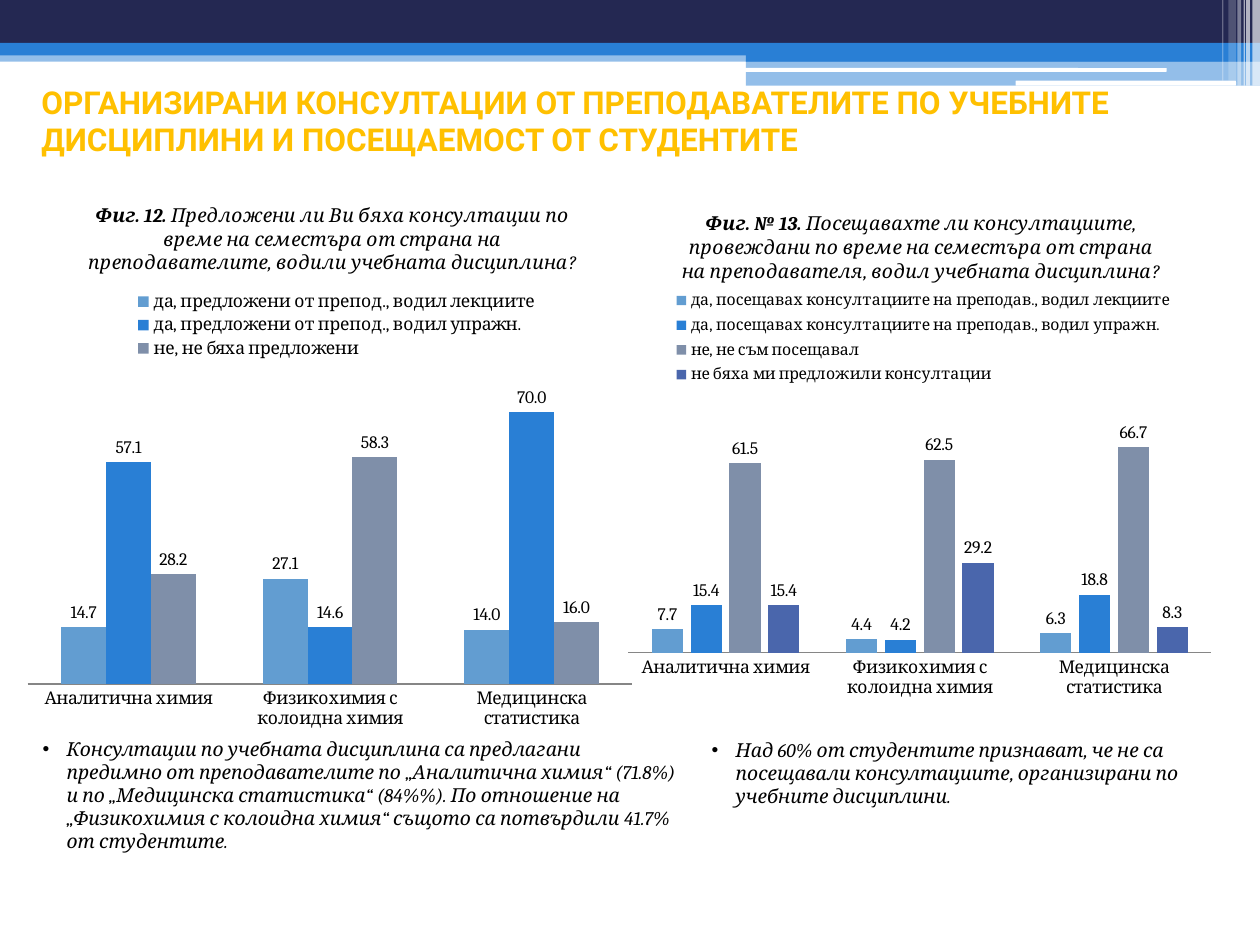
from pptx import Presentation
from pptx.chart.data import CategoryChartData
from pptx.dml.color import RGBColor
from pptx.enum.chart import XL_CHART_TYPE, XL_LABEL_POSITION, XL_LEGEND_POSITION, XL_TICK_MARK
from pptx.enum.shapes import MSO_SHAPE
from pptx.enum.text import MSO_ANCHOR
from pptx.oxml import parse_xml
from pptx.oxml.ns import qn
from pptx.util import Inches, Pt
from lxml.etree import SubElement

CATS = ["Аналитична химия", "Физикохимия с колоидна химия", "Медицинска статистика"]
FILLS = ["629DD1", "297FD5", "7F8FA9", "4A66AC"]
SERIF = "Cambria"
CHART_NS = "http://schemas.openxmlformats.org/drawingml/2006/chart"


def color(code):
    return RGBColor.from_string(code)


def write(par, text, size=11, font=SERIF, ink="000000", bold=False, italic=False):
    run = par.add_run()
    run.text = text
    face = run.font
    face.size, face.name, face.bold, face.italic = Pt(size), font, bold, italic
    face.color.rgb = color(ink)


def place(node, index, inner=False, **spots):
    """Give a chart part a manual layout, as shares of the chart."""
    for old in node.findall(qn("c:layout")):
        node.remove(old)
    target = '<c:layoutTarget val="inner"/>' if inner else ""
    modes = '<c:xMode val="edge"/><c:yMode val="edge"/>'
    sides = "".join(f'<c:{key} val="{val}"/>' for key, val in spots.items())
    node.insert(index, parse_xml(
        f'<c:layout xmlns:c="{CHART_NS}"><c:manualLayout>{target}{modes}{sides}'
        "</c:manualLayout></c:layout>"))


class Deck:
    def __init__(self):
        self.show = Presentation()
        self.show.slide_width, self.show.slide_height = Inches(10), Inches(7.5)
        self.slide = self.show.slides.add_slide(self.show.slide_layouts[6])

    def bar(self, x, y, w, h, fill, alpha=100, kind=MSO_SHAPE.RECTANGLE):
        shape = self.slide.shapes.add_shape(kind, Inches(x), Inches(y), Inches(w), Inches(h))
        shape.shadow.inherit = False
        shape.line.fill.background()
        shape.fill.solid()
        shape.fill.fore_color.rgb = color(fill)
        if alpha < 100:
            tone = shape.fill._xPr.find(qn("a:solidFill"))[0]
            SubElement(tone, qn("a:alpha"), val=str(alpha * 1000))

    def text(self, x, y, w, h, words, bullet=False, anchor=MSO_ANCHOR.TOP, **style):
        box = self.slide.shapes.add_textbox(Inches(x), Inches(y), Inches(w), Inches(h))
        frame = box.text_frame
        frame.word_wrap = True
        frame.vertical_anchor = anchor
        par = frame.paragraphs[0]
        if bullet:
            par.space_after = Pt(10)
            props = par._p.get_or_add_pPr()
            props.set("marL", str(Inches(0.19)))
            props.set("indent", str(-Inches(0.19)))
            SubElement(props, qn("a:buFont"), typeface="Arial")
            SubElement(props, qn("a:buChar"), char="•")
        write(par, words, **style)

    def chart(self, x, y, w, h, label, title, rows, plot, legend, head, size=10, overlap=0):
        data = CategoryChartData(number_format="0.0")
        data.categories = CATS
        for name, vals in rows:
            data.add_series(name, vals)
        chart = self.slide.shapes.add_chart(
            XL_CHART_TYPE.COLUMN_CLUSTERED, Inches(x), Inches(y), Inches(w), Inches(h), data).chart
        chart.font.size, chart.font.name = Pt(10), SERIF
        chart.font.color.rgb = color("000000")

        # Title
        par = chart.chart_title.text_frame.paragraphs[0]
        write(par, label, bold=True, italic=True)
        write(par, " " + title, italic=True)
        chart.chart_title.include_in_layout = False
        place(chart.chart_title._element, 1, **head)

        # Legend
        chart.has_legend = True
        key = chart.legend
        key.position = XL_LEGEND_POSITION.TOP
        key.include_in_layout = False
        key.font.size, key.font.name = Pt(size), SERIF
        key.font.color.rgb = color("000000")
        place(key._element, 1, **legend)

        # Axes
        axis = chart.value_axis
        axis.minimum_scale, axis.maximum_scale = 0, 80
        axis.has_major_gridlines = False
        axis.visible = False
        base = chart.category_axis
        base.major_tick_mark = XL_TICK_MARK.NONE
        base.format.line.color.rgb = color("868686")

        # Columns and their values
        body = chart.plots[0]
        body.gap_width, body.overlap = 150, overlap
        body.vary_by_categories = False
        for series, fill in zip(body.series, FILLS):
            series.format.fill.solid()
            series.format.fill.fore_color.rgb = color(fill)
            tags = series.data_labels
            tags.show_value = True
            tags.number_format, tags.number_format_is_linked = "0.0", False
            tags.position = XL_LABEL_POSITION.OUTSIDE_END
        place(chart._chartSpace.chart.plotArea, 0, inner=True, **plot)


def main():
    deck = Deck()

    # Header bands
    deck.bar(0, 0.4, 10, 0.09, "297FD5", 50)
    deck.bar(0, 0, 10, 0.34, "242852")
    deck.bar(0, 0.34, 10, 0.1, "297FD5")
    deck.bar(5.92, 0.39, 4.08, 0.1, "297FD5")
    deck.bar(5.92, 0.48, 4.08, 0.2, "297FD5", 50)
    for x, y, w, h in [(5.91, 0.54, 3.35, 0.03), (8.06, 0.64, 1.75, 0.04)]:
        deck.bar(x, y, w, h, "FFFFFF", kind=MSO_SHAPE.ROUNDED_RECTANGLE)

    # Pale stripes at the right edge
    for x, w, h, alpha in [(9.94, 0.06, 0.68, 65), (9.89, 0.03, 0.68, 65),
                           (9.87, 0.01, 0.68, 60), (9.82, 0.03, 0.68, 40),
                           (9.75, 0.06, 0.64, 20), (9.7, 0.01, 0.64, 30)]:
        deck.bar(x, 0, w, h, "FFFFFF", alpha)

    # Heading
    deck.text(0.23, 0.6, 9.53, 0.71,
              "ОРГАНИЗИРАНИ КОНСУЛТАЦИИ ОТ ПРЕПОДАВАТЕЛИТЕ ПО УЧЕБНИТЕ "
              "ДИСЦИПЛИНИ И ПОСЕЩАЕМОСТ ОТ СТУДЕНТИТЕ",
              anchor=MSO_ANCHOR.MIDDLE, size=18, font="Roboto", ink="FFC000", bold=True)

    # Charts
    deck.chart(0.12, 1.39, 5, 4.49, "Фиг. 12.",
               "Предложени ли Ви бяха консултации по време на семестъра от страна на "
               "преподавателите, водили учебната дисциплина?",
               [("да, предложени от препод., водил лекциите", (14.7, 27.1, 14)),
                ("да, предложени от препод., водил упражн.", (57.1, 14.6, 70)),
                ("не, не бяха предложени", (28.2, 58.3, 16))],
               plot=dict(x=0.02, y=0.35, w=0.96, h=0.55),
               legend=dict(x=0.18, y=0.2, w=0.66, h=0.13), head=dict(x=0.11, y=0.04))
    deck.chart(4.84, 1.47, 4.92, 4.17, "Фиг. № 13.",
               "Посещавахте ли консултациите, провеждани по време на семестъра от страна "
               "на преподавателя, водил учебната дисциплина?",
               [("да, посещавах консултациите на преподав., водил лекциите", (7.7, 4.4, 6.3)),
                ("да, посещавах консултациите на преподав., водил упражн.", (15.4, 4.2, 18.8)),
                ("не, не съм посещавал", (61.5, 62.5, 66.7)),
                ("не бяха ми предложили консултации", (15.4, 29.2, 8.3))],
               plot=dict(x=0.03, y=0.42, w=0.94, h=0.47),
               legend=dict(x=0.09, y=0.19, w=0.83, h=0.2), head=dict(x=0.11, y=0.04),
               size=9, overlap=-25)

    # Findings
    deck.text(0.24, 5.8, 5.23, 1.34,
              "Консултации по учебната дисциплина са предлагани предимно от преподавателите "
              "по „Аналитична химия“ (71.8%) и по „Медицинска статистика“ (84%%). По отношение "
              "на „Физикохимия с колоидна химия“ същото са потвърдили 41.7% от студентите.",
              bullet=True, italic=True)
    deck.text(5.55, 5.81, 4.17, 0.93,
              "Над 60% от студентите признават, че не са посещавали консултациите, "
              "организирани по учебните дисциплини.", bullet=True, italic=True)

    deck.show.save("out.pptx")


if __name__ == "__main__":
    main()
